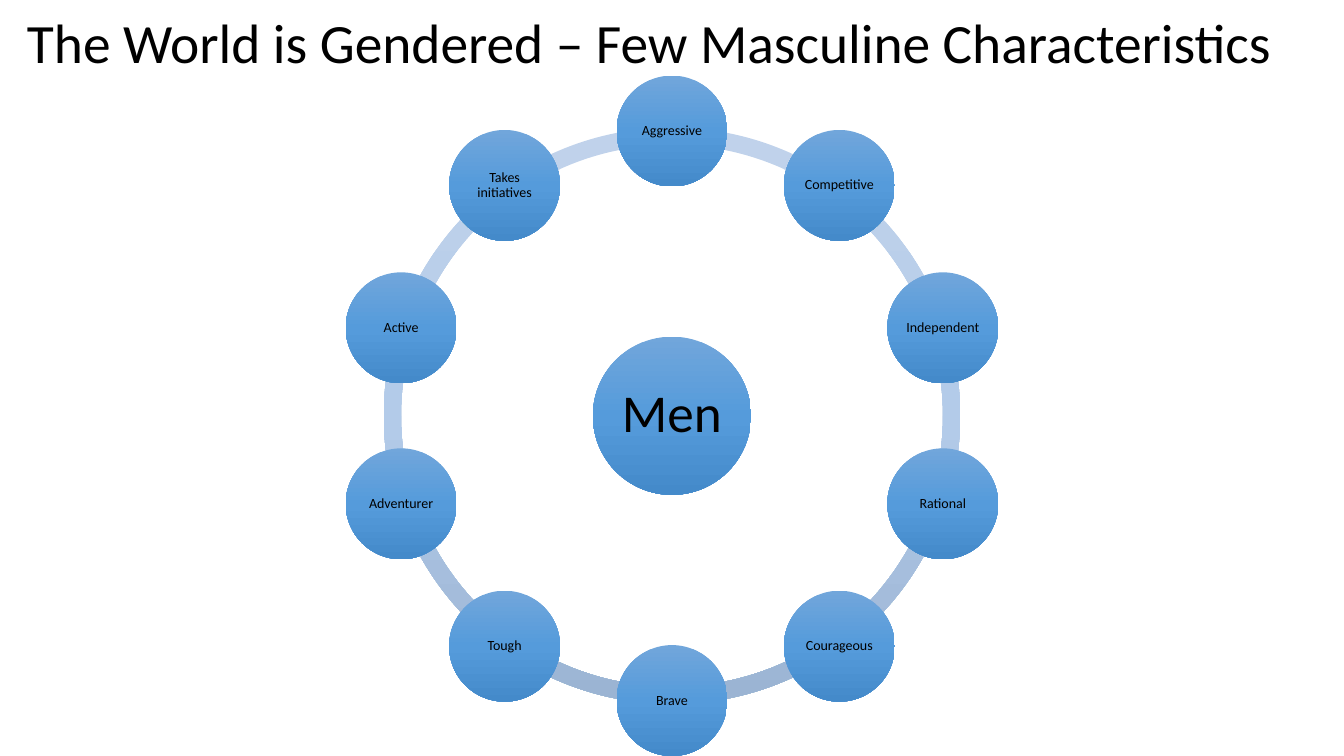
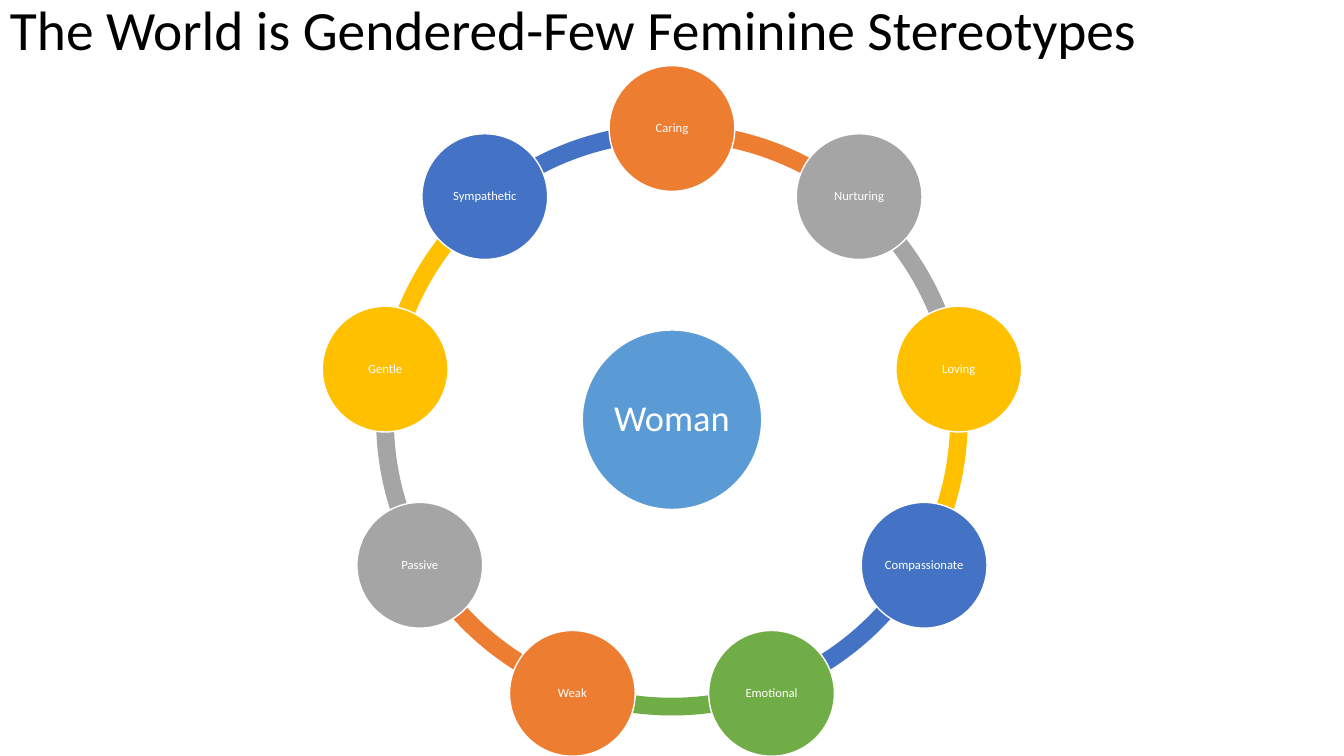
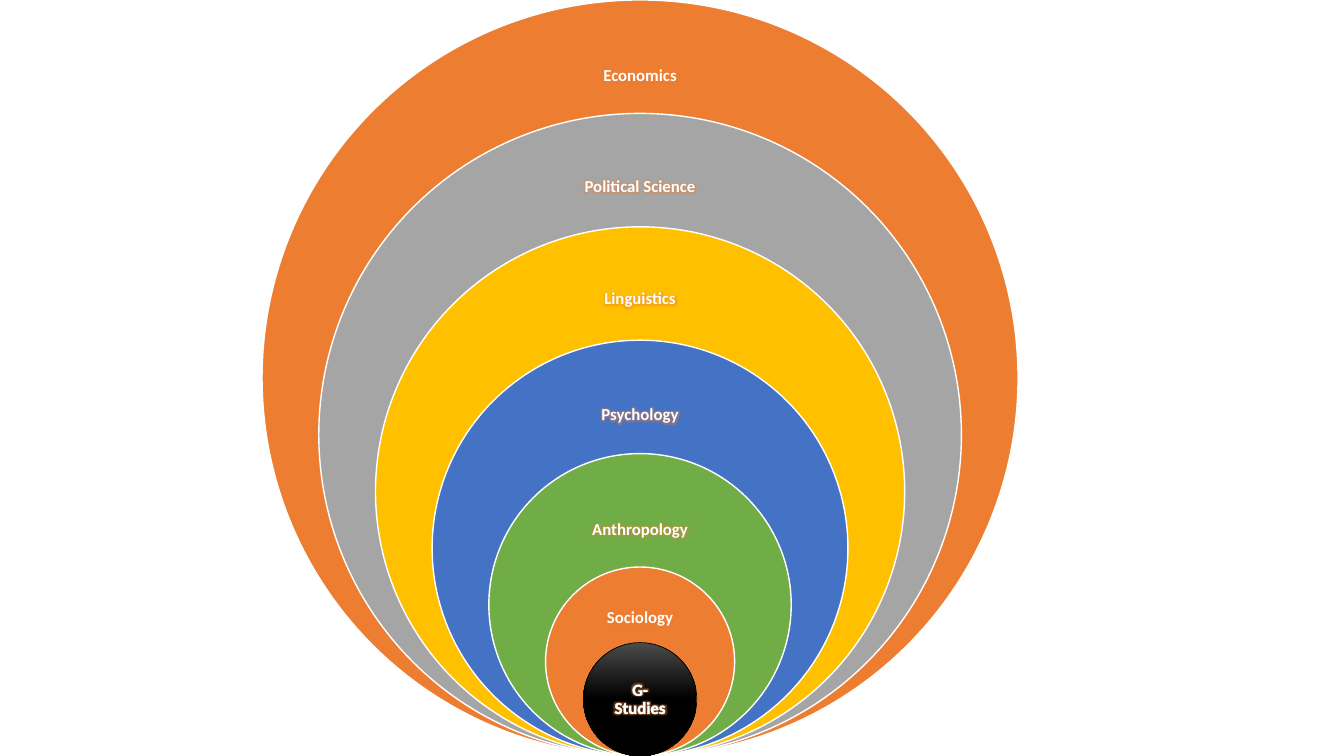
from copy import deepcopy
from dataclasses import dataclass
from math import cos, radians, sin

from lxml import etree
from pptx import Presentation
from pptx.dml.color import RGBColor
from pptx.enum.shapes import MSO_SHAPE
from pptx.enum.text import MSO_ANCHOR, PP_ALIGN
from pptx.oxml.ns import qn
from pptx.util import Pt

OVAL, ARC = MSO_SHAPE.OVAL, MSO_SHAPE.BLOCK_ARC
MIDDLE = MSO_ANCHOR.MIDDLE
LEFT, CENTER = PP_ALIGN.LEFT, PP_ALIGN.CENTER

FONT = "Calibri"
WIDTH, HEIGHT = 960, 540
TITLE_SIZE = 39.6
BLANK_LAYOUT = 6
ARC_UNIT = 0.6  # adjustment value of one degree

BLACK = RGBColor(0x00, 0x00, 0x00)
WHITE = RGBColor(0xFF, 0xFF, 0xFF)
CHARCOAL = RGBColor(0x4B, 0x4B, 0x4B)
ORANGE = RGBColor(0xED, 0x7D, 0x31)
GRAY = RGBColor(0xA5, 0xA5, 0xA5)
GOLD = RGBColor(0xFF, 0xC0, 0x00)
BLUE = RGBColor(0x44, 0x72, 0xC4)
GREEN = RGBColor(0x70, 0xAD, 0x47)
SKY = RGBColor(0x5B, 0x9B, 0xD5)

# A list is a gradient from top to bottom
NODE_GRADIENT = [RGBColor(0x71, 0xA6, 0xDB), RGBColor(0x55, 0x9B, 0xDB),
                 RGBColor(0x44, 0x8A, 0xCA)]
ARC_GRADIENT = [RGBColor(0xC0, 0xD2, 0xEB), RGBColor(0xB3, 0xCB, 0xE9),
                RGBColor(0x9B, 0xB4, 0xD3)]
CORE_GRADIENT = [CHARCOAL, BLACK, BLACK]

MASCULINE = [(name, NODE_GRADIENT, ARC_GRADIENT) for name in (
    "Aggressive", "Competitive", "Independent", "Rational", "Courageous",
    "Brave", "Tough", "Adventurer", "Active", "Takes initiatives")]

FEMININE = [(name, color, color) for name, color in (
    ("Caring", ORANGE), ("Nurturing", GRAY), ("Loving", GOLD),
    ("Compassionate", BLUE), ("Emotional", GREEN), ("Weak", ORANGE),
    ("Passive", GRAY), ("Gentle", GOLD), ("Sympathetic", BLUE))]

# Name, fill, circle diameter, label width, label height, label centre below circle top
DISCIPLINES = [
    ("Economics", ORANGE, 540, 202, 54, 54.4),
    ("Political Science", GRAY, 459, 198, 52.6, 52.6),
    ("Linguistics", GOLD, 378, 196, 51.8, 51.8),
    ("Psychology", BLUE, 297, 160.6, 53.3, 53.6),
    ("Anthropology", GREEN, 216, 140.4, 54, 54.4),
    ("Sociology", ORANGE, 135, 91.4, 32.4, 36.7),
    ("G-Studies", CORE_GRADIENT, 81, 57.6, 40.3, 40.6),
]
DISCIPLINE_X = 457.2


@dataclass
class Wheel:
    """Sizes and text style of a hub with a ring of nodes."""
    center_y: float
    orbit: float
    node: float
    hub: float
    ring: float
    thickness: float
    hub_size: float
    node_size: float
    ink: RGBColor
    outline: RGBColor | None


MEN_WHEEL = Wheel(297, 203.4, 79.2, 113, 411.8, 0.03, 38, 10, BLACK, None)
WOMAN_WHEEL = Wheel(299.8, 208, 89.8, 128.2, 422.6, 0.03, 26, 9, WHITE, WHITE)


def write(shape, text, size, color, align=CENTER, inset=None, bold=False):
    """Put one styled paragraph in a shape."""
    frame = shape.text_frame
    frame.word_wrap = True
    frame.vertical_anchor = MIDDLE
    if inset is not None:
        frame.margin_left = frame.margin_right = Pt(inset)
        frame.margin_top = frame.margin_bottom = Pt(inset)
    para = frame.paragraphs[0]
    para.text = text
    para.alignment = align
    para.line_spacing = 0.9
    font = para.runs[0].font
    font.name = FONT
    font.size = Pt(size)
    font.bold = bold
    font.color.rgb = color


def paint(shape, fill, outline=None, line_width=1):
    shape.shadow.inherit = False
    if isinstance(fill, list):
        shape.fill.gradient()
        shape.fill.gradient_angle = 270
        stops = shape.element.spPr.find(qn("a:gradFill")).find(qn("a:gsLst"))
        stops.append(deepcopy(stops[-1]))
        for index, (stop, color) in enumerate(zip(shape.fill.gradient_stops, fill)):
            stop.position = index / 2
            stop.color.rgb = color
    else:
        shape.fill.solid()
        shape.fill.fore_color.rgb = fill
    if outline is None:
        shape.line.fill.background()
    else:
        shape.line.color.rgb = outline
        shape.line.width = Pt(line_width)


def add_centered(page, kind, x, y, diameter):
    return page.shapes.add_shape(kind, Pt(x - diameter / 2), Pt(y - diameter / 2),
                                 Pt(diameter), Pt(diameter))


def add_box(page, left, top, width, height):
    return page.shapes.add_textbox(Pt(left), Pt(top), Pt(width), Pt(height))


def add_title(page, text, left, top, width, height):
    write(add_box(page, left, top, width, height), text, TITLE_SIZE, BLACK, LEFT)


def add_wheel(page, wheel, hub_text, hub_fill, nodes):
    center_x = WIDTH / 2
    step = 360 / len(nodes)
    angles = [270 + step * index for index in range(len(nodes))]

    for angle, (_, _, fill) in reversed(list(zip(angles, nodes))):
        arc = add_centered(page, ARC, center_x, wheel.center_y, wheel.ring)
        arc.adjustments[0] = angle % 360 * ARC_UNIT
        arc.adjustments[1] = (angle + step) % 360 * ARC_UNIT
        arc.adjustments[2] = wheel.thickness
        paint(arc, fill)

    hub = add_centered(page, OVAL, center_x, wheel.center_y, wheel.hub)
    paint(hub, hub_fill, wheel.outline)
    write(hub, hub_text, wheel.hub_size, wheel.ink, inset=3)

    for angle, (name, fill, _) in zip(angles, nodes):
        node = add_centered(page, OVAL,
                            center_x + wheel.orbit * cos(radians(angle)),
                            wheel.center_y + wheel.orbit * sin(radians(angle)),
                            wheel.node)
        paint(node, fill, wheel.outline)
        write(node, name, wheel.node_size, wheel.ink, inset=0.8)


def run_properties(shape):
    return next(shape.element.iter(qn("a:rPr")))


def add_glow(label, color):
    effects = etree.Element(qn("a:effectLst"))
    glow = etree.SubElement(effects, qn("a:glow"), rad=str(Pt(5)))
    tint = etree.SubElement(glow, qn("a:srgbClr"), val=str(color))
    etree.SubElement(tint, qn("a:alpha"), val="40000")
    run_properties(label).find(qn("a:solidFill")).addnext(effects)


def add_text_outline(label, color, width):
    line = etree.Element(qn("a:ln"), w=str(Pt(width)))
    fill = etree.SubElement(line, qn("a:solidFill"))
    etree.SubElement(fill, qn("a:srgbClr"), val=str(color))
    run_properties(label).insert(0, line)


def add_nested_circles(page):
    for name, fill, diameter, width, height, drop in DISCIPLINES:
        is_core = fill is CORE_GRADIENT
        circle = add_centered(page, OVAL, DISCIPLINE_X, HEIGHT - diameter / 2, diameter)
        paint(circle, fill, BLACK if is_core else WHITE, 0.5 if is_core else 1)

        middle = HEIGHT - diameter + drop
        label = add_box(page, DISCIPLINE_X - width / 2, middle - height / 2, width, height)
        write(label, name, 12, WHITE, inset=6.5, bold=True)
        add_glow(label, ORANGE)
        if is_core:
            add_text_outline(label, WHITE, 0.52)


def main():
    deck = Presentation()
    deck.slide_width, deck.slide_height = Pt(WIDTH), Pt(HEIGHT)
    men, women, fields = (deck.slides.add_slide(deck.slide_layouts[BLANK_LAYOUT])
                          for _ in range(3))

    add_title(men, "The World is Gendered – Few Masculine Characteristics",
              12.2, 12.2, 939, 41)
    add_wheel(men, MEN_WHEEL, "Men", NODE_GRADIENT, MASCULINE)

    add_title(women, "The World is Gendered-Few Feminine Stereotypes", 0, 0, 849, 46.8)
    add_wheel(women, WOMAN_WHEEL, "Woman", SKY, FEMININE)

    add_nested_circles(fields)
    deck.save("out.pptx")


if __name__ == "__main__":
    main()
